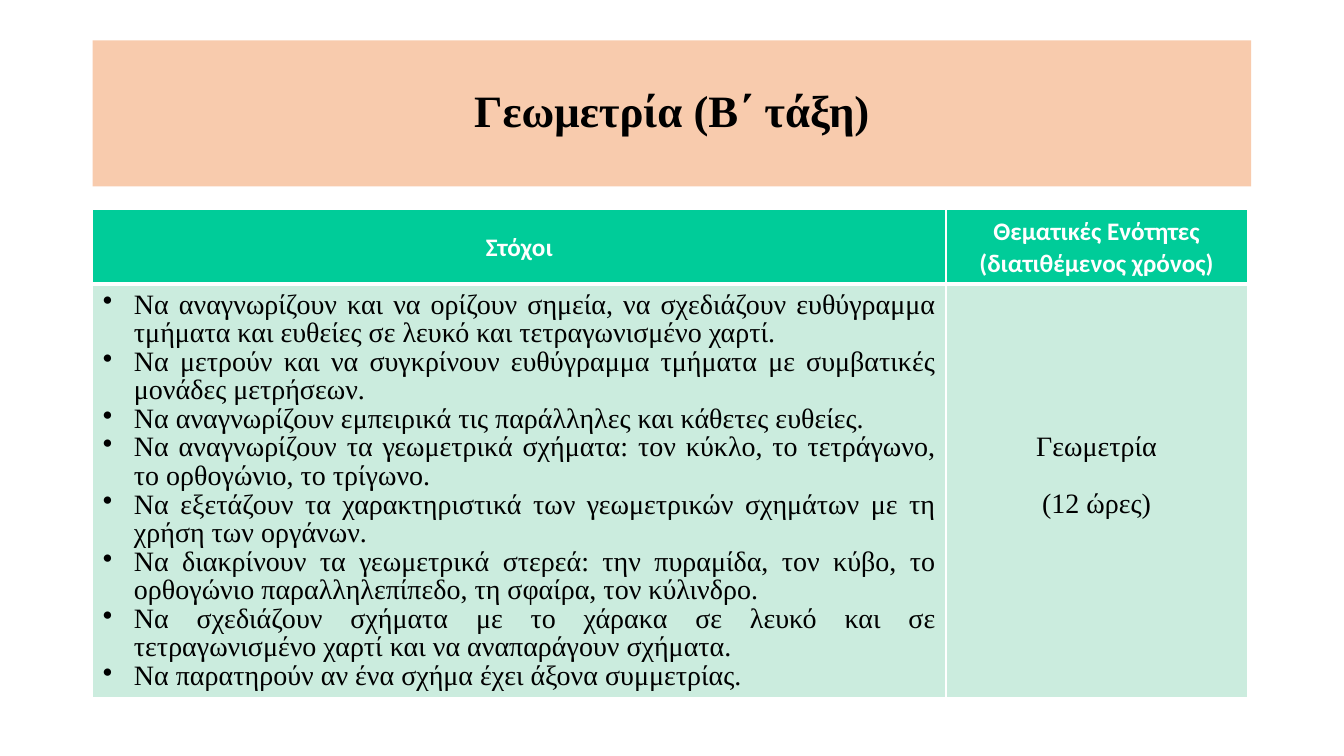
from lxml import etree
from pptx import Presentation, util as u
from pptx.dml.color import RGBColor
from pptx.enum import shapes, text
from pptx.oxml.ns import qn

GOALS = [
    "Να αναγνωρίζουν και να ορίζουν σημεία, να σχεδιάζουν ευθύγραμμα τμήματα και ευθείες σε λευκό και τετραγωνισμένο χαρτί.",
    "Να μετρούν και να συγκρίνουν ευθύγραμμα τμήματα με συμβατικές μονάδες μετρήσεων.",
    "Να αναγνωρίζουν εμπειρικά τις παράλληλες και κάθετες ευθείες.",
    "Να αναγνωρίζουν τα γεωμετρικά σχήματα: τον κύκλο, το τετράγωνο, το ορθογώνιο, το τρίγωνο.",
    "Να εξετάζουν τα χαρακτηριστικά των γεωμετρικών σχημάτων με τη χρήση των οργάνων.",
    "Να διακρίνουν τα γεωμετρικά στερεά: την πυραμίδα, τον κύβο, το ορθογώνιο παραλληλεπίπεδο, τη σφαίρα, τον κύλινδρο.",
    "Να σχεδιάζουν σχήματα με το χάρακα σε λευκό και σε τετραγωνισμένο χαρτί και να αναπαράγουν σχήματα.",
    "Να παρατηρούν αν ένα σχήμα έχει άξονα συμμετρίας.",
]


def color(value):
    return RGBColor.from_string(value)


def write(tf, lines, size=20, font="Times New Roman", ink="000000", bold=False,
          align=text.PP_ALIGN.CENTER, spacing=0.92, gap=0, bullet=False):
    for i, line in enumerate(lines):
        p = tf.paragraphs[0] if i == 0 else tf.add_paragraph()
        p.alignment, p.line_spacing = align, spacing
        p.space_before = u.Pt(gap if i else 0)
        if bullet:
            pPr = p._p.get_or_add_pPr()
            indent = u.Inches(0.31)
            pPr.set("marL", str(indent))
            pPr.set("indent", str(-indent))
            etree.SubElement(pPr, qn("a:buChar")).set("char", "•")
        r = p.add_run()
        r.text = line
        r.font.size, r.font.name, r.font.bold = u.Pt(size), font, bold
        r.font.color.rgb = color(ink)


class Deck:
    """Draws styled elements on one slide, on a grid of tenth-inch columns and rows."""

    title_fill, head_fill, body_fill, rule = "F8CBAD", "00CC99", "CBECDE", "FFFFFF"
    thin, thick = 0.91, 2.95

    def __init__(self):
        self.prs = Presentation()
        self.prs.slide_width, self.prs.slide_height = self.grid(133.4, 75)
        self.s = self.prs.slides.add_slide(self.prs.slide_layouts[6])

    def grid(self, *cells):
        return [u.Inches(c / 10) for c in cells]

    def title(self, line, *box):
        sp = self.s.shapes.add_shape(shapes.MSO_SHAPE.RECTANGLE, *self.grid(*box))
        sp.shadow.inherit = False
        sp.fill.solid()
        sp.fill.fore_color.rgb = color(self.title_fill)
        sp.line.fill.background()
        sp.text_frame.word_wrap = True
        sp.text_frame.vertical_anchor = text.MSO_ANCHOR.MIDDLE
        write(sp.text_frame, [line], size=32, bold=True, spacing=0.9)

    def table(self, left, top, cols, rows):
        box = self.grid(left, top, sum(cols), sum(rows))
        tbl = self.s.shapes.add_table(len(rows), len(cols), *box).table
        for col, width in zip(tbl.columns, self.grid(*cols)):
            col.width = width
        for row, height in zip(tbl.rows, self.grid(*rows)):
            row.height = height
        return tbl

    def cell(self, cell, lines, head=False, top=0.05, **style):
        tcPr = cell._tc.get_or_add_tcPr()
        widths = {"L": self.thin, "R": self.thin,
                  "T": self.thin if head else self.thick,
                  "B": self.thick if head else self.thin}
        for side, width in widths.items():
            ln = etree.SubElement(tcPr, qn("a:ln" + side), w=str(u.Pt(width)))
            fill = etree.SubElement(ln, qn("a:solidFill"))
            etree.SubElement(fill, qn("a:srgbClr"), val=self.rule)
        cell.fill.solid()
        cell.fill.fore_color.rgb = color(self.head_fill if head else self.body_fill)
        cell.margin_left = cell.margin_right = u.Inches(0.1)
        cell.margin_top, cell.margin_bottom = u.Inches(top), u.Inches(0.05)
        cell.vertical_anchor = text.MSO_ANCHOR.MIDDLE if head else text.MSO_ANCHOR.TOP
        if head:
            style.update(size=18, font="Calibri", ink="FFFFFF", bold=True, spacing=1.04)
        write(cell.text_frame, lines, **style)


def main():
    deck = Deck()
    deck.title("Γεωμετρία (Β΄ τάξη)", 9.2, 4, 115, 14.5)
    tbl = deck.table(9.2, 20.8, cols=[84.7, 29.9], rows=[7.4, 41])
    deck.cell(tbl.cell(0, 0), ["Στόχοι"], head=True)
    deck.cell(tbl.cell(0, 1), ["Θεματικές Ενότητες", "(διατιθέμενος χρόνος)"], head=True)
    deck.cell(tbl.cell(1, 0), GOALS, top=0.07, bullet=True, align=text.PP_ALIGN.JUSTIFY)
    deck.cell(tbl.cell(1, 1), ["Γεωμετρία", "(12 ώρες)"], top=1.48, gap=20.5)
    deck.prs.save("out.pptx")


if __name__ == "__main__":
    main()
